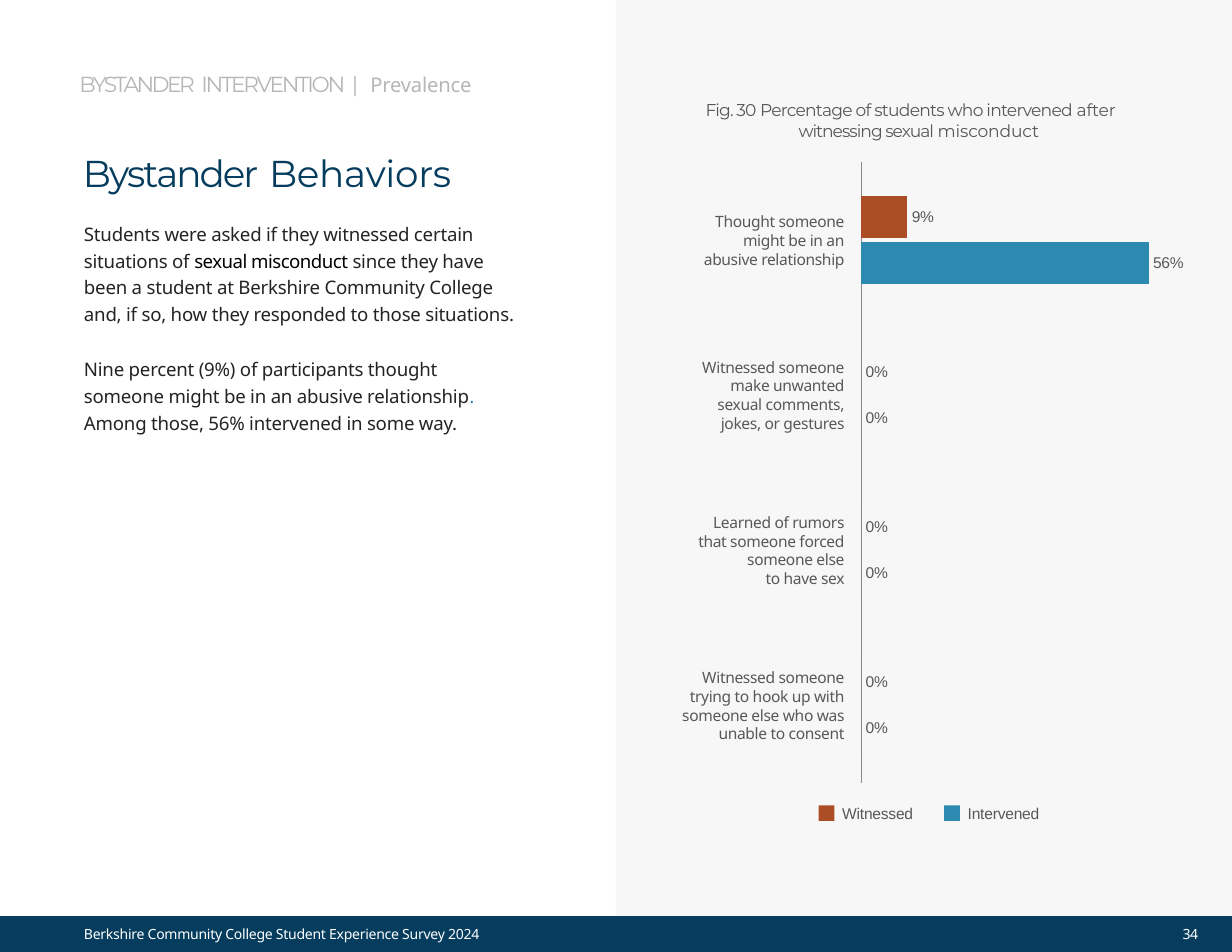
from lxml import etree
from pptx import Presentation
from pptx.chart.data import CategoryChartData
from pptx.dml.color import RGBColor
from pptx.enum.chart import XL_CHART_TYPE, XL_LABEL_POSITION, XL_TICK_LABEL_POSITION, XL_TICK_MARK
from pptx.enum.shapes import MSO_SHAPE
from pptx.enum.text import MSO_ANCHOR, MSO_AUTO_SIZE, PP_ALIGN
from pptx.oxml.ns import qn
from pptx.util import Inches, Pt

BAR_CLUSTERED = XL_CHART_TYPE.BAR_CLUSTERED
OUTSIDE_END = XL_LABEL_POSITION.OUTSIDE_END
NO_LABELS = XL_TICK_LABEL_POSITION.NONE
NO_TICK = XL_TICK_MARK.NONE
RECTANGLE = MSO_SHAPE.RECTANGLE
TOP = MSO_ANCHOR.TOP
NO_AUTOSIZE = MSO_AUTO_SIZE.NONE
LEFT, RIGHT = PP_ALIGN.LEFT, PP_ALIGN.RIGHT

HEADING_FONT, BODY_FONT, NUMBER_FONT = "Montserrat", "Noto Sans", "Arial"
NAVY, INK, BLACK, WHITE = "063D5E", "242424", "000000", "FFFFFF"
PALE, SILVER, GRAY, AXIS_GRAY = "F7F7F7", "B6B6B6", "585858", "8A8A8A"
RUST, BLUE, TEAL = "AC4E25", "2D89B0", "2C88B0"

CHART_FRAME = (5.9, 1.35, 5, 6.1)
PLOT_AREA = (7.69, 1.45, 2.75, 5.54)
LABEL_RIGHT, LABEL_WIDTH, LABEL_LINE_POINTS = 7.54, 1.6, 12.1
CATEGORIES = [
    ("Thought someone", "might be in an", "abusive relationship"),
    ("Witnessed someone", "make unwanted", "sexual comments,", "jokes, or gestures"),
    ("Learned of rumors", "that someone forced", "someone else", "to have sex"),
    ("Witnessed someone", "trying to hook up with", "someone else who was",
     "unable to consent"),
]
SERIES = [("Witnessed", (0.09, 0, 0, 0), RUST), ("Intervened", (0.56, 0, 0, 0), BLUE)]


def color(hex_text):
    """Turn a hex string into a colour."""
    return RGBColor.from_string(hex_text)


def style_font(font, name, size, hex_text):
    """Set the family, size and colour of a font."""
    font.name = name
    font.size = Pt(size)
    font.bold = False
    font.color.rgb = color(hex_text)


def add_span(para, text, name, size, hex_text, spacing):
    """Append one run with its letter spacing in points."""
    span = para.add_run()
    span.text = text
    style_font(span.font, name, size, hex_text)
    span.font._element.set("spc", str(round(spacing * 100)))


def fill_text(box, place, spans, line_points=None):
    """Place a text shape without insets and write its runs."""
    box.left, box.top, box.width, box.height = map(Inches, place)
    frame = box.text_frame
    frame.word_wrap = True
    frame.auto_size = NO_AUTOSIZE
    frame.vertical_anchor = TOP
    frame.margin_left = frame.margin_right = frame.margin_top = frame.margin_bottom = 0
    para = frame.paragraphs[0]
    para.alignment = LEFT
    if line_points:
        para.line_spacing = Pt(line_points)
    for span in spans:
        add_span(para, *span)
    return para


def add_text(page, place, spans, line_points=None):
    """Add a text box and return its paragraph."""
    box = page.shapes.add_textbox(*map(Inches, place))
    return fill_text(box, place, spans, line_points)


def add_panel(page, place, hex_text):
    """Add a plain filled rectangle."""
    panel = page.shapes.add_shape(RECTANGLE, *map(Inches, place))
    panel.shadow.inherit = False
    panel.fill.solid()
    panel.fill.fore_color.rgb = color(hex_text)
    panel.line.fill.background()


def set_plot_layout(chart):
    """Fix the inner plot area as fractions of the chart."""
    left, top, width, height = CHART_FRAME
    plot_left, plot_top, plot_width, plot_height = PLOT_AREA
    values = {"layoutTarget": "inner", "xMode": "edge", "yMode": "edge",
              "x": (plot_left - left) / width, "y": (plot_top - top) / height,
              "w": plot_width / width, "h": plot_height / height}
    plot_area = chart._chartSpace.find(f".//{qn('c:plotArea')}")
    for old in plot_area.findall(qn("c:layout")):
        plot_area.remove(old)
    layout = etree.Element(qn("c:layout"))
    manual = etree.SubElement(layout, qn("c:manualLayout"))
    for tag, value in values.items():
        etree.SubElement(manual, qn(f"c:{tag}")).set("val", str(value))
    plot_area.insert(0, layout)


def style_axes(chart):
    """Show only the category axis line."""
    names = chart.category_axis
    names.reverse_order = True
    names.major_tick_mark = names.minor_tick_mark = NO_TICK
    names.tick_label_position = NO_LABELS
    names.has_major_gridlines = False
    names.format.line.color.rgb = color(AXIS_GRAY)
    names.format.line.width = Pt(0.75)
    scale = chart.value_axis
    scale.minimum_scale, scale.maximum_scale = 0, 0.6
    scale.has_major_gridlines = False
    scale.visible = False


def style_bars(plot):
    """Set the bar gaps, colours and value labels."""
    plot.vary_by_categories = False
    plot.gap_width, plot.overlap = 160, -10
    for bars, (_, _, hex_text) in zip(plot.series, SERIES):
        bars.format.fill.solid()
        bars.format.fill.fore_color.rgb = color(hex_text)
    plot.has_data_labels = True
    labels = plot.data_labels
    labels.show_value = True
    labels.number_format, labels.number_format_is_linked = "0%", False
    labels.position = OUTSIDE_END
    style_font(labels.font, NUMBER_FONT, 10, GRAY)


def add_bar_chart(page):
    """Add the chart of witnessed and intervened shares."""
    data = CategoryChartData(number_format="0%")
    data.categories = [" ".join(lines) for lines in CATEGORIES]
    for name, values, _ in SERIES:
        data.add_series(name, values)
    chart = page.shapes.add_chart(BAR_CLUSTERED, *map(Inches, CHART_FRAME), data).chart
    style_font(chart.font, NUMBER_FONT, 10, GRAY)
    chart.has_title = chart.has_legend = False
    style_axes(chart)
    style_bars(chart.plots[0])
    set_plot_layout(chart)


def add_category_labels(page):
    """Write each category right-aligned beside the middle of its bars."""
    step = PLOT_AREA[3] / len(CATEGORIES)
    for index, lines in enumerate(CATEGORIES):
        height = len(lines) * LABEL_LINE_POINTS / 72
        top = PLOT_AREA[1] + (index + 0.5) * step - height / 2
        place = (LABEL_RIGHT - LABEL_WIDTH, top, LABEL_WIDTH, height)
        para = add_text(page, place, [], LABEL_LINE_POINTS)
        para.alignment = RIGHT
        for number, line in enumerate(lines):
            if number:
                para.add_line_break()
            add_span(para, line, BODY_FONT, 10, GRAY, -0.2)


def add_legend(page):
    """Add a colour key for each series."""
    for index, (name, _, hex_text) in enumerate(SERIES):
        left = 7.31 + index * 1.12
        add_panel(page, (left, 7.19, 0.14, 0.14), hex_text)
        add_text(page, (left + 0.21, 7.18, 0.8, 0.2),
                 [(name, NUMBER_FONT, 10, GRAY, -0.1)])


def add_body(page):
    """Add the two paragraphs of findings."""
    def words(text, hex_text=INK, spacing=-0.15):
        return text, BODY_FONT, 12, hex_text, spacing

    add_text(page, (0.75, 1.95, 3.93, 0.97), [
        words("Students were asked if they witnessed certain situations of "),
        words("sexual misconduct ", BLACK, -0.35),
        words("since they have been a student at Berkshire Community College "
              "and, if so, how they responded to those situations.")], 17.2)
    add_text(page, (0.75, 3.16, 3.54, 0.73), [
        words("Nine percent (9%) of participants thought someone might be in an "
              "abusive relationship"),
        words(". ", TEAL),
        words("Among those, 56% intervened in some way.")], 17.2)


def add_headings(page):
    """Write the section line, the title and the figure caption."""
    add_text(page, (0.71, 0.63, 3.8, 0.26), [
        ("BYSTANDER", HEADING_FONT, 14, SILVER, -1.7),
        (" ", HEADING_FONT, 14, SILVER, 0.5),
        ("INTERVENTION", HEADING_FONT, 14, SILVER, -1.5),
        (" ", HEADING_FONT, 14, SILVER, 0.5),
        ("| ", HEADING_FONT, 14, SILVER, 2),
        ("Prevalence", BODY_FONT, 13, SILVER, -0.1)])
    fill_text(page.shapes.title, (0.74, 1.34, 3.94, 0.45), [
        ("Bystander", HEADING_FONT, 24, NAVY, -1.3),
        (" ", HEADING_FONT, 24, NAVY, 0.6),
        ("Behaviors", HEADING_FONT, 24, NAVY, -0.2)])
    caption = add_text(page, (6.3, 0.89, 3.96, 0.4), [
        ("Fig. 30 ", HEADING_FONT, 11, GRAY, -0.6),
        ("Percentage of students who intervened ", HEADING_FONT, 11, GRAY, -0.5),
        ("after ", HEADING_FONT, 11, GRAY, -0.1),
        ("witnessing sexual ", HEADING_FONT, 11, GRAY, -0.65),
        ("misconduct", HEADING_FONT, 11, GRAY, -0.1)])
    properties = caption._p.get_or_add_pPr()
    properties.set("marL", str(Inches(0.83)))
    properties.set("indent", str(Inches(-0.83)))


def main():
    """Build the slide and save it."""
    deck = Presentation()
    deck.slide_width, deck.slide_height = Inches(11), Inches(8.5)
    page = deck.slides.add_slide(deck.slide_layouts[5])
    add_panel(page, (5.5, 0, 5.5, 8.18), PALE)
    add_panel(page, (0, 8.18, 11, 0.32), NAVY)
    add_headings(page)
    add_body(page)
    add_bar_chart(page)
    add_category_labels(page)
    add_legend(page)
    add_text(page, (0.75, 8.26, 3.64, 0.2), [
        ("Berkshire Community College Student Experience Survey 2024",
         BODY_FONT, 9, WHITE, -0.17)])
    add_text(page, (10.56, 8.26, 0.2, 0.2), [("34", BODY_FONT, 9, WHITE, -0.3)])
    deck.save("out.pptx")


if __name__ == "__main__":
    main()
